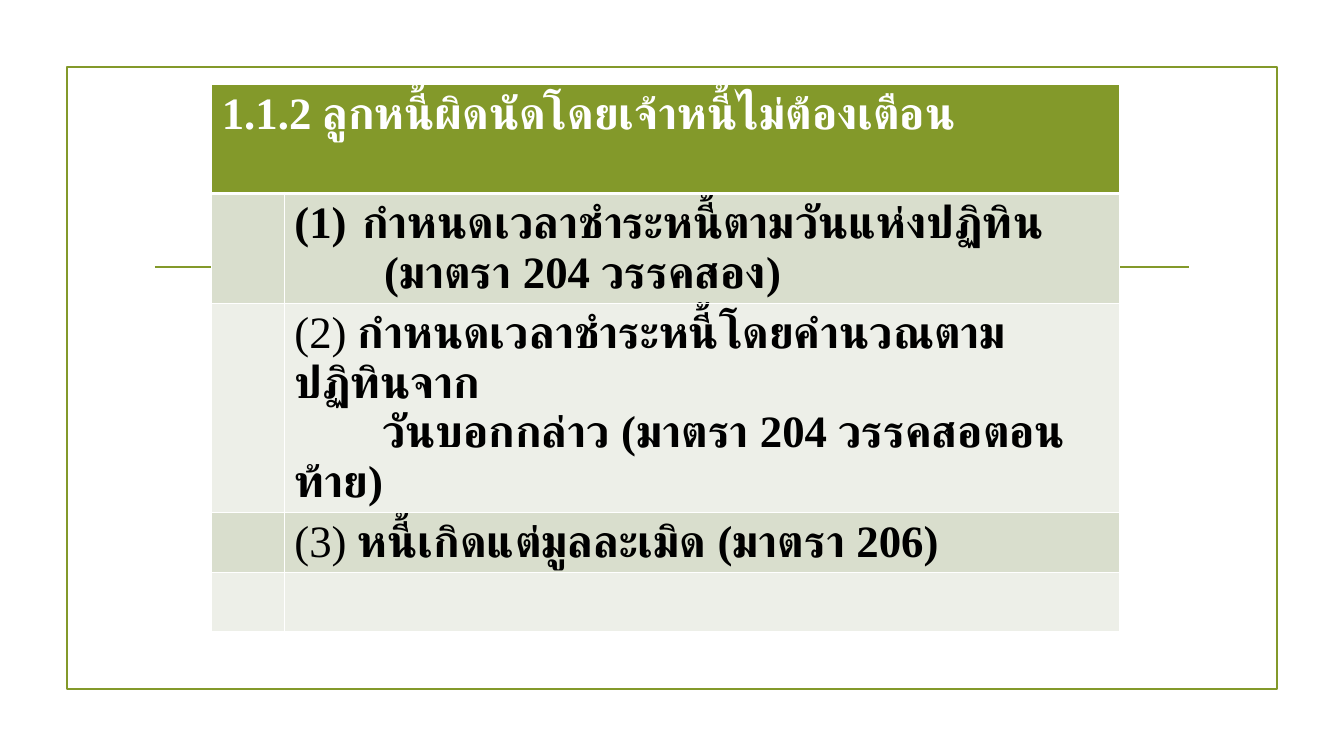
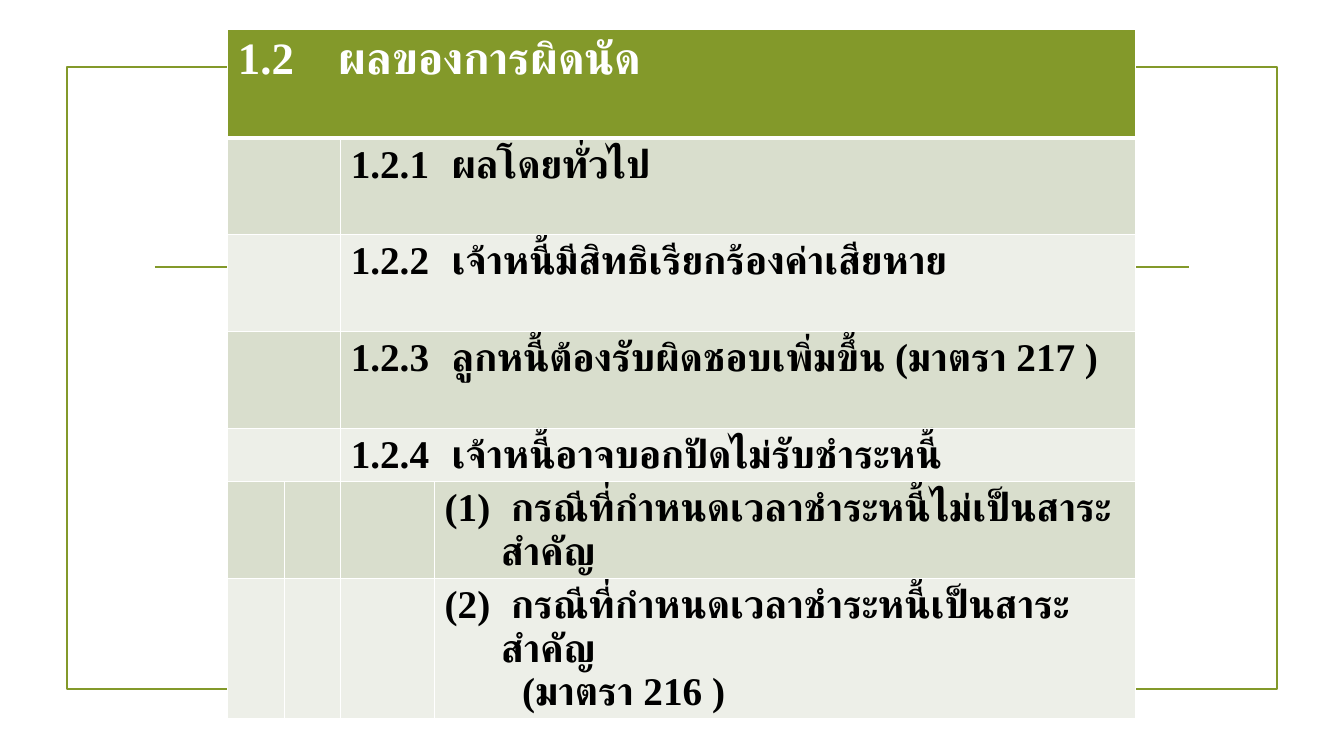
from dataclasses import dataclass
from itertools import accumulate
from lxml.etree import SubElement as Sub
from pptx import Presentation
from pptx.dml.color import RGBColor as Rgb
from pptx.enum.shapes import MSO_CONNECTOR as Conn, MSO_SHAPE as Kind
from pptx.oxml import parse_xml
from pptx.oxml.ns import nsdecls, qn
from pptx.util import Inches as Inch, Pt

WIDE, HIGH = 13.33, 7.5
FONT = "Times New Roman"
INK = {
    "olive": "83992A",
    "dark": "D9DECD",
    "pale": "EDEFE8",
    "white": "FFFFFF",
    "black": "000000",
}


@dataclass
class Para:
    text: str
    lead: str = ""
    num: int = 0
    left: float = 0
    first: float = 0
    tab: float = 0


def tint(name):
    return Rgb.from_string(INK[name])


def frame(slide, box):
    x, y, w, h = box
    rect = slide.shapes.add_shape(Kind.RECTANGLE, *map(Inch, box))
    rect.shadow.inherit = False
    rect.fill.background()
    inset, drop = w * 0.0725, h * 0.321
    rule = slide.shapes.add_connector(
        Conn.STRAIGHT, Inch(x + inset), Inch(y + drop),
        Inch(x + w - inset), Inch(y + drop))
    Sub(rule._element.spPr, qn("a:effectLst"))
    for item in (rect, rule):
        item.line.color.rgb = tint("olive")
        item.line.width = Pt(1.25)


def edge(cell, widths):
    props = cell._tc.get_or_add_tcPr()
    for spot, (side, width) in enumerate(zip("LRTB", widths)):
        props.insert(spot, parse_xml(
            f'<a:ln{side} {nsdecls("a")} w="{Pt(width)}"><a:solidFill>'
            f'<a:srgbClr val="{INK["white"]}"/></a:solidFill></a:ln{side}>'))


def write(par, item, size, color):
    props = par._p.get_or_add_pPr()
    props.set("marL", str(Inch(item.left)))
    props.set("indent", str(Inch(item.first)))
    if item.num:
        Sub(props, qn("a:buFont"), typeface="Arial")
        Sub(props, qn("a:buAutoNum"), type="arabicParenBoth",
            startAt=str(item.num))
    else:
        Sub(props, qn("a:buNone"))
    if item.tab:
        tabs = Sub(props, qn("a:tabLst"))
        Sub(tabs, qn("a:tab"), pos=str(Inch(item.tab)), algn="l")
    font = par.font
    font.size, font.bold, font.name = Pt(size), True, FONT
    font.color.rgb = tint(color)
    Sub(props.find(qn("a:defRPr")), qn("a:cs"), typeface=FONT)
    if item.lead:
        par.add_run().text = item.lead
        par.runs[0].font.bold = False
    par.add_run().text = item.text


def fill(cell, items, size, color):
    body = cell.text_frame
    for spot, item in enumerate(items):
        par = body.add_paragraph() if spot else body.paragraphs[0]
        write(par, item, size, color)


def grid(slide, spot, cols, rows, size):
    x, y = spot
    high = sum(row[0] for row in rows)
    table = slide.shapes.add_table(
        len(rows), len(cols), Inch(x), Inch(y),
        Inch(sum(cols)), Inch(high)).table
    for col, width in zip(table.columns, cols):
        col.width = Inch(width)
    for r, (tall, spans, items) in enumerate(rows):
        table.rows[r].height = Inch(tall)
        shade = "olive" if r == 0 else "dark" if r % 2 else "pale"
        for c in range(len(cols)):
            cell = table.cell(r, c)
            cell.fill.solid()
            cell.fill.fore_color.rgb = tint(shade)
            edge(cell, (1, 1, 3 if r == 1 else 1, 3 if r == 0 else 1))
        for end, span in zip(accumulate(spans), spans):
            if span > 1:
                table.cell(r, end - span).merge(table.cell(r, end - 1))
        last = table.cell(r, len(cols) - spans[-1])
        fill(last, items, size if r else 32, "black" if r else "white")


def default(slide):
    pair = (1, 1)
    grid(slide, (2.1, 0.84), (0.72, 8.28), [
        (1.08, (2,), [
            Para("1.1.2\tลูกหนี้ผิดนัดโดยเจ้าหนี้ไม่ต้องเตือน", tab=1.1)]),
        (1.04, pair, [
            Para(" กำหนดเวลาชำระหนี้ตามวันแห่งปฏิทิน",
                 num=1, left=0.56, first=-0.56),
            Para("(มาตรา 204 วรรคสอง)", left=0.89)]),
        (2.03, pair, [
            Para("กำหนดเวลาชำระหนี้โดยคำนวณตามปฏิทินจาก", lead="(2) "),
            Para("วันบอกกล่าว (มาตรา 204 วรรคสอตอนท้าย)", first=0.87)]),
        (0.59, pair, [
            Para("หนี้เกิดแต่มูลละเมิด (มาตรา 206)", lead="(3) ")]),
        (0.59, pair, []),
    ], 32)


def effect(slide):
    half, each = (2, 2), (1, 1, 1, 1)
    heads = [
        (0.96, "1.2.1\tผลโดยทั่วไป"),
        (0.96, "1.2.2\tเจ้าหนี้มีสิทธิเรียกร้องค่าเสียหาย"),
        (0.96, "1.2.3\tลูกหนี้ต้องรับผิดชอบเพิ่มขึ้น (มาตรา 217 )"),
        (0.53, "1.2.4\tเจ้าหนี้อาจบอกปัดไม่รับชำระหนี้"),
    ]
    grid(slide, (2.26, 0.29), (0.56, 0.56, 0.93, 6.95), [
        (1.08, (4,), [Para("1.2\tผลของการผิดนัด", tab=0.78)]),
        *((tall, half, [Para(text, tab=0.97)]) for tall, text in heads),
        (0.87, each, [
            Para(" กรณีที่กำหนดเวลาชำระหนี้ไม่เป็นสาระสำคัญ",
                 num=1, left=0.56, first=-0.56)]),
        (1.31, each, [
            Para(" กรณีที่กำหนดเวลาชำระหนี้เป็นสาระสำคัญ",
                 num=2, left=0.56, first=-0.56),
            Para("(มาตรา 216 )", left=0.77)]),
    ], 28)


def main():
    deck = Presentation()
    deck.slide_width, deck.slide_height = Inch(WIDE), Inch(HIGH)
    for build in (default, effect):
        slide = deck.slides.add_slide(deck.slide_layouts[6])
        frame(slide, (WIDE * 0.05, HIGH * 0.089, WIDE * 0.9, HIGH * 0.823))
        build(slide)
    deck.save("out.pptx")


if __name__ == "__main__":
    main()
